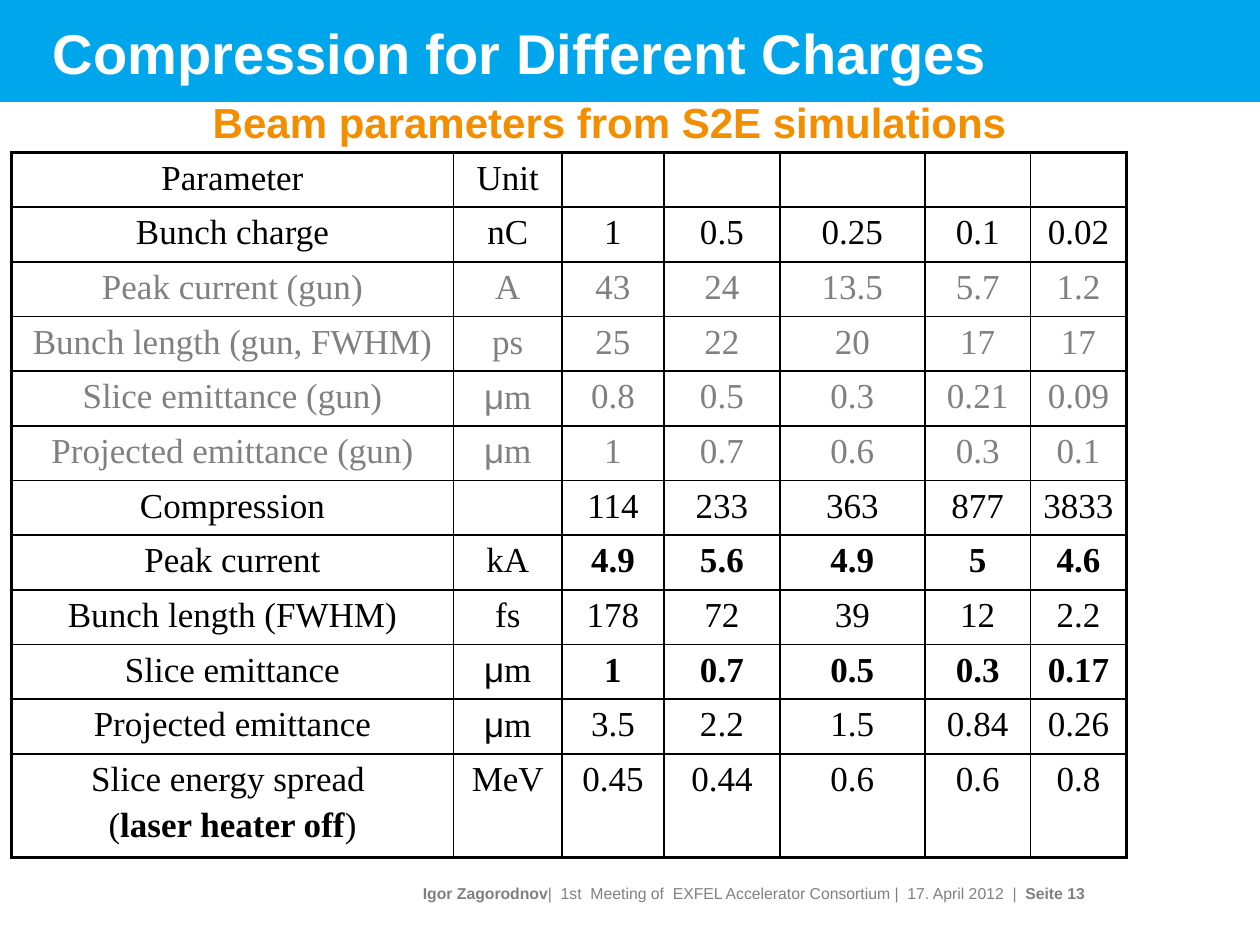
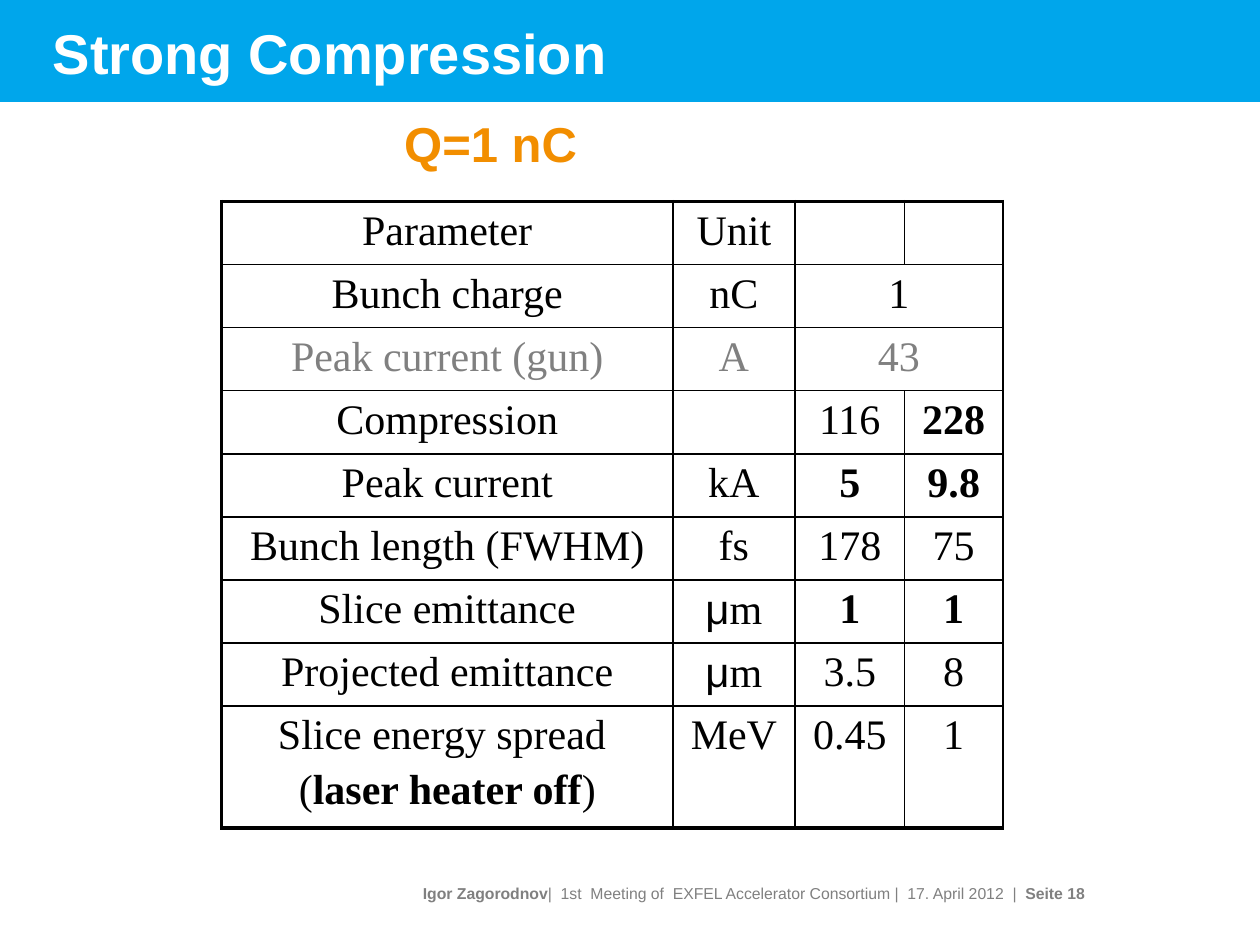
from dataclasses import dataclass

from lxml import etree
from pptx import Presentation
from pptx.dml.color import RGBColor
from pptx.enum.shapes import MSO_SHAPE
from pptx.enum.text import MSO_ANCHOR, PP_ALIGN
from pptx.oxml.ns import qn
from pptx.util import Inches, Length, Pt

# Shared look
CYAN = RGBColor(0x00, 0xA6, 0xEB)
ORANGE = RGBColor(0xF2, 0x8E, 0x00)
GREY = RGBColor(0x80, 0x80, 0x80)
BLACK = RGBColor(0x00, 0x00, 0x00)
WHITE = RGBColor(0xFF, 0xFF, 0xFF)
SANS = "Arial"
SERIF = "Times New Roman"
THIN = Pt(1)
THICK = Pt(2.25)

RECTANGLE = MSO_SHAPE.RECTANGLE
MIDDLE = MSO_ANCHOR.MIDDLE
TOP = MSO_ANCHOR.TOP
LEFT = PP_ALIGN.LEFT
RIGHT = PP_ALIGN.RIGHT
CENTER = PP_ALIGN.CENTER

# The slide is a grid of 100 columns by 75 rows
SLIDE_WIDTH = Inches(10)
SLIDE_HEIGHT = Inches(7.5)
COLUMNS = 100
ROWS = 75
BLANK_LAYOUT = 6


def across(columns: float) -> Length:
    return Length(round(SLIDE_WIDTH * columns / COLUMNS))


def down(rows: float) -> Length:
    return Length(round(SLIDE_HEIGHT * rows / ROWS))


@dataclass(frozen=True)
class Box:
    left: float
    top: float
    width: float
    height: float

    def lengths(self) -> tuple[Length, Length, Length, Length]:
        return across(self.left), down(self.top), across(self.width), down(self.height)


@dataclass(frozen=True)
class TextStyle:
    size: float
    color: RGBColor
    font: str = SANS
    bold: bool = True
    align: PP_ALIGN = LEFT


@dataclass(frozen=True)
class Row:
    """One table row; *stars* mark bold text."""
    cells: tuple[str, ...]
    muted: bool = False
    merged_from: int | None = None


@dataclass(frozen=True)
class ParameterTable:
    left: float
    top: float
    size: float
    widths: tuple[float, ...]
    heights: tuple[float, ...]
    right_line: Length
    rows: tuple[Row, ...]


@dataclass(frozen=True)
class Page:
    title: str
    number: int
    caption: str
    caption_box: Box
    caption_size: float
    table: ParameterTable


BAND_BOX = Box(0, 0, COLUMNS, 8.1)
TITLE_BOX = Box(3.2, 1.1, 93.2, 6)
FOOTER_BOX = Box(3.1, 68.7, 83, 4.4)
TITLE_STYLE = TextStyle(32, WHITE)
FOOTER_STYLE = TextStyle(9, GREY, bold=False, align=RIGHT)
FOOTER = ("*Igor Zagorodnov*|  1st  Meeting of  EXFEL Accelerator Consortium |"
          "  17. April 2012  |  *Seite {}*")

HEATER_LABEL = "Slice energy spread \n(*laser heater off*)"

# Slide contents
CHARGES = ParameterTable(
    left=0.9, top=12.1, size=20,
    widths=(35.1, 8.6, 8.1, 9.2, 11.5, 8.4, 7.6),
    heights=(4.2, 4.2) + (4.1,) * 9 + (7.7,),
    right_line=THICK,
    rows=(
        Row(("Parameter", "Unit", "", "", "", "", "")),
        Row(("Bunch charge", "nC", "1", "0.5", "0.25", "0.1", "0.02")),
        Row(("Peak current (gun)", "A", "43", "24", "13.5", "5.7", "1.2"), muted=True),
        Row(("Bunch length (gun, FWHM)", "ps", "25", "22", "20", "17", "17"), muted=True),
        Row(("Slice emittance (gun)", "μm", "0.8", "0.5", "0.3", "0.21", "0.09"), muted=True),
        Row(("Projected emittance (gun)", "μm", "1", "0.7", "0.6", "0.3", "0.1"), muted=True),
        Row(("Compression", "", "114", "233", "363", "877", "3833")),
        Row(("Peak current", "kA", "*4.9*", "*5.6*", "*4.9*", "*5*", "*4.6*")),
        Row(("Bunch length (FWHM)", "fs", "178", "72", "39", "12", "2.2")),
        Row(("Slice emittance", "μm", "*1*", "*0.7*", "*0.5*", "*0.3*", "*0.17*")),
        Row(("Projected emittance", "μm", "3.5", "2.2", "1.5", "0.84", "0.26")),
        Row((HEATER_LABEL, "MeV", "0.45", "0.44", "0.6", "0.6", "0.8")),
    ),
)
STRONG = ParameterTable(
    left=17.6, top=16, size=24,
    widths=(35.8, 9.7, 8.7, 7.8),
    heights=(5,) + (4.7,) * 7 + (9.05,),
    right_line=THIN,
    rows=(
        Row(("Parameter", "Unit", "", "")),
        Row(("Bunch charge", "nC", "1", ""), merged_from=2),
        Row(("Peak current (gun)", "A", "43", ""), muted=True, merged_from=2),
        Row(("Compression", "", "116", "*228*")),
        Row(("Peak current", "kA", "*5*", "*9.8*")),
        Row(("Bunch length (FWHM)", "fs", "178", "75")),
        Row(("Slice emittance", "μm", "*1*", "*1*")),
        Row(("Projected emittance", "μm", "3.5", "8")),
        Row((HEATER_LABEL, "MeV", "0.45", "1")),
    ),
)
PAGES = (
    Page("Compression for Different Charges", 13, "Beam parameters from S2E simulations",
         Box(15.9, 7.2, 65.6, 5), 24, CHARGES),
    Page("Strong Compression", 18, "Q=1 nC", Box(31.1, 8.5, 15.9, 5.7), 28, STRONG),
)


def write_text(frame, text: str, style: TextStyle) -> None:
    """Fill a text frame; stars toggle bold, and a leading μ is set in the sans font."""
    for index, line in enumerate(text.split("\n")):
        paragraph = frame.add_paragraph() if index else frame.paragraphs[0]
        if index:
            paragraph.space_before = Pt(style.size * 0.2)
        paragraph.alignment = style.align
        font = paragraph.font
        font.name, font.size, font.bold = style.font, Pt(style.size), style.bold
        font.color.rgb = style.color
        for position, piece in enumerate(line.split("*")):
            symbol = "μ" if piece.startswith("μ") else ""
            for part in filter(None, (symbol, piece.removeprefix("μ"))):
                run = paragraph.add_run()
                run.text = part
                if position % 2:
                    run.font.bold = True
                if part == "μ":
                    run.font.name = SANS


def add_text(slide, box: Box, text: str, style: TextStyle,
             anchor: MSO_ANCHOR = MIDDLE, wrap: bool = True):
    frame = slide.shapes.add_textbox(*box.lengths()).text_frame
    frame.word_wrap = wrap
    frame.vertical_anchor = anchor
    write_text(frame, text, style)
    return frame


def set_borders(cell, lines: dict[str, Length]) -> None:
    properties = cell._tc.get_or_add_tcPr()
    for side, width in lines.items():
        line = etree.SubElement(properties, qn(f"a:ln{side}"), w=str(int(width)))
        fill = etree.SubElement(line, qn("a:solidFill"))
        etree.SubElement(fill, qn("a:srgbClr"), val=str(BLACK))


def add_parameter_table(slide, content: ParameterTable) -> None:
    box = Box(content.left, content.top, sum(content.widths), sum(content.heights))
    last_row, last_column = len(content.rows) - 1, len(content.widths) - 1
    table = slide.shapes.add_table(last_row + 1, last_column + 1, *box.lengths()).table
    table.first_row = table.horz_banding = False
    for column, width in zip(table.columns, content.widths):
        column.width = across(width)
    for table_row, height in zip(table.rows, content.heights):
        table_row.height = down(height)

    for row_index, row in enumerate(content.rows):
        style = TextStyle(content.size, GREY if row.muted else BLACK, SERIF, False, CENTER)
        for column_index, text in enumerate(row.cells):
            cell = table.cell(row_index, column_index)
            write_text(cell.text_frame, text, style)
            set_borders(cell, {
                "L": THIN if column_index else THICK,
                "R": content.right_line if column_index == last_column else THIN,
                "T": THIN if row_index else THICK,
                "B": THICK if row_index == last_row else THIN,
            })
            cell.fill.background()
        if row.merged_from is not None:
            table.cell(row_index, row.merged_from).merge(table.cell(row_index, last_column))


def add_frame(slide, page: Page) -> None:
    """Draw the title band, title and footer."""
    band = slide.shapes.add_shape(RECTANGLE, *BAND_BOX.lengths())
    band.shadow.inherit = False
    band.fill.solid()
    band.fill.fore_color.rgb = CYAN
    band.line.fill.background()
    add_text(slide, TITLE_BOX, page.title, TITLE_STYLE)
    footer = add_text(slide, FOOTER_BOX, FOOTER.format(page.number), FOOTER_STYLE)
    footer.margin_right = 0


def main() -> None:
    presentation = Presentation()
    presentation.slide_width, presentation.slide_height = SLIDE_WIDTH, SLIDE_HEIGHT
    for page in PAGES:
        slide = presentation.slides.add_slide(presentation.slide_layouts[BLANK_LAYOUT])
        add_frame(slide, page)
        add_parameter_table(slide, page.table)
        add_text(slide, page.caption_box, page.caption,
                 TextStyle(page.caption_size, ORANGE), TOP, wrap=False)
    presentation.save("out.pptx")


if __name__ == "__main__":
    main()
